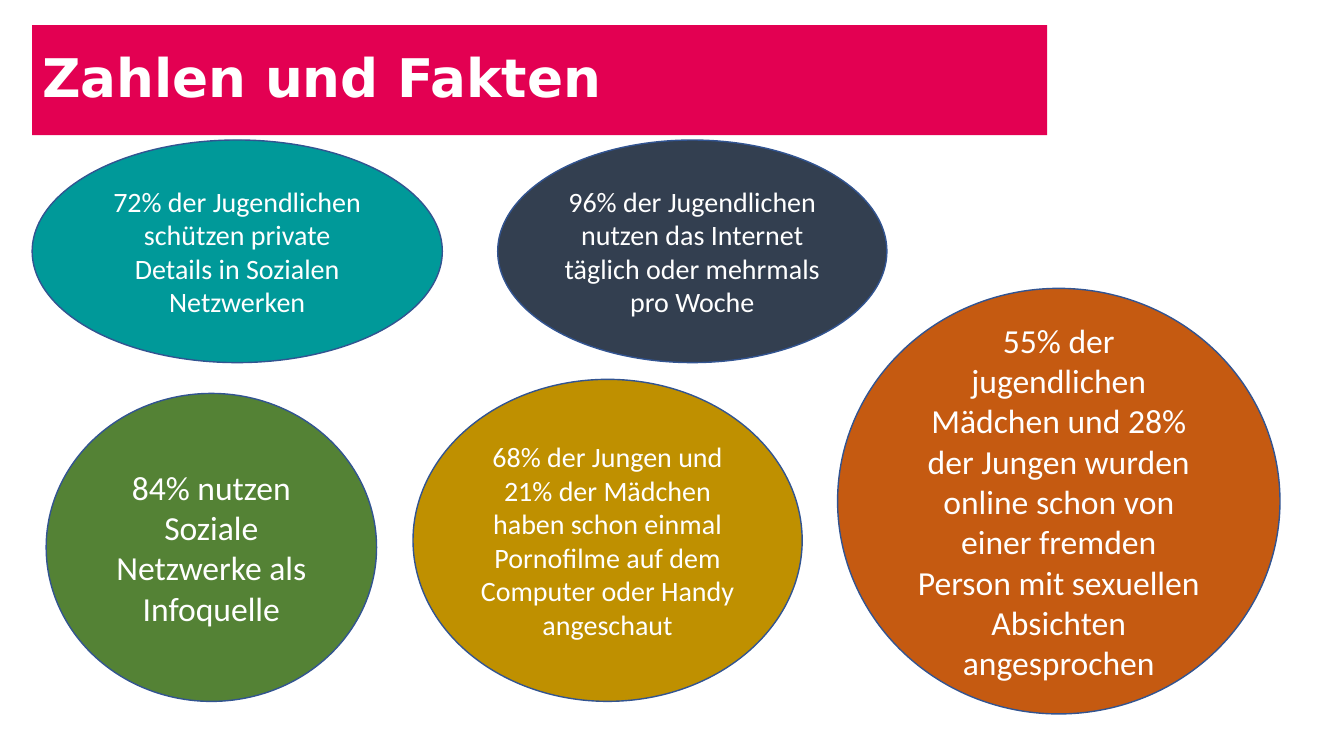
"""Build a slide of facts about young people online, set in coloured ellipses."""
from dataclasses import dataclass

from pptx import Presentation
from pptx.dml.color import RGBColor
from pptx.enum.shapes import MSO_SHAPE
from pptx.enum.text import MSO_ANCHOR, PP_ALIGN
from pptx.shapes.autoshape import Shape
from pptx.slide import Slide
from pptx.util import Pt

RECTANGLE, ELLIPSE = MSO_SHAPE.RECTANGLE, MSO_SHAPE.OVAL
MIDDLE = MSO_ANCHOR.MIDDLE
LEFT, CENTER = PP_ALIGN.LEFT, PP_ALIGN.CENTER

COLORS = {
    "pink": "E30052",
    "teal": "009999",
    "orange": "C55A11",
    "slate": "333F50",
    "green": "548235",
    "gold": "BF9000",
    "outline": "325491",
    "white": "FFFFFF",
}
TITLE_FONT = {"name": "DejaVu Sans", "size": Pt(38), "bold": True}
TITLE_PARA = {"alignment": LEFT, "line_spacing": 0.9}
FACT_PARA = {"alignment": CENTER}


@dataclass(frozen=True)
class Fact:
    text: str
    color: str
    left: float
    top: float
    width: float
    height: float
    size: int


FACTS = [
    Fact("72% der Jugendlichen schützen private Details in Sozialen Netzwerken",
         "teal", 23, 100, 293, 159, 20),
    Fact("55% der jugendlichen Mädchen und 28% der Jungen wurden online schon von "
         "einer fremden Person mit sexuellen Absichten angesprochen",
         "orange", 598.3, 206, 316, 304, 24),
    Fact("96% der Jugendlichen nutzen das Internet täglich oder mehrmals pro Woche",
         "slate", 355.5, 100, 278, 159, 20),
    Fact("84% nutzen Soziale Netzwerke als Infoquelle",
         "green", 33, 281, 236, 220, 24),
    Fact("68% der Jungen und 21% der Mädchen haben schon einmal Pornofilme auf dem "
         "Computer oder Handy angeschaut",
         "gold", 295, 271, 278, 230, 20),
]


def rgb(color: str) -> RGBColor:
    return RGBColor.from_string(COLORS[color])


def apply_format(target: object, values: dict) -> None:
    for name, value in values.items():
        setattr(target, name, value)


def add_filled_shape(page: Slide, kind: MSO_SHAPE, bounds: tuple, color: str) -> Shape:
    shape = page.shapes.add_shape(kind, *(Pt(length) for length in bounds))
    shape.shadow.inherit = False
    shape.fill.solid()
    shape.fill.fore_color.rgb = rgb(color)
    return shape


def write_text(shape: Shape, text: str, para_format: dict, font_format: dict) -> None:
    frame = shape.text_frame
    apply_format(frame, {"word_wrap": True, "vertical_anchor": MIDDLE})
    para = frame.paragraphs[0]
    apply_format(para, para_format)
    span = para.add_run()
    span.text = text
    apply_format(span.font, font_format)
    span.font.color.rgb = rgb("white")


def add_title(page: Slide) -> None:
    banner = add_filled_shape(page, RECTANGLE, (23, 18, 725, 78.5), "pink")
    banner.line.fill.background()
    write_text(banner, "Zahlen und Fakten", TITLE_PARA, TITLE_FONT)


def add_fact(page: Slide, fact: Fact) -> None:
    bounds = (fact.left, fact.top, fact.width, fact.height)
    bubble = add_filled_shape(page, ELLIPSE, bounds, fact.color)
    bubble.line.color.rgb = rgb("outline")
    bubble.line.width = Pt(1)
    write_text(bubble, fact.text, FACT_PARA, {"name": "Calibri", "size": Pt(fact.size)})


def main() -> None:
    deck = Presentation()
    apply_format(deck, {"slide_width": Pt(960), "slide_height": Pt(540)})
    page = deck.slides.add_slide(deck.slide_layouts[6])
    add_title(page)
    for fact in FACTS:
        add_fact(page, fact)
    deck.save("out.pptx")


if __name__ == "__main__":
    main()
